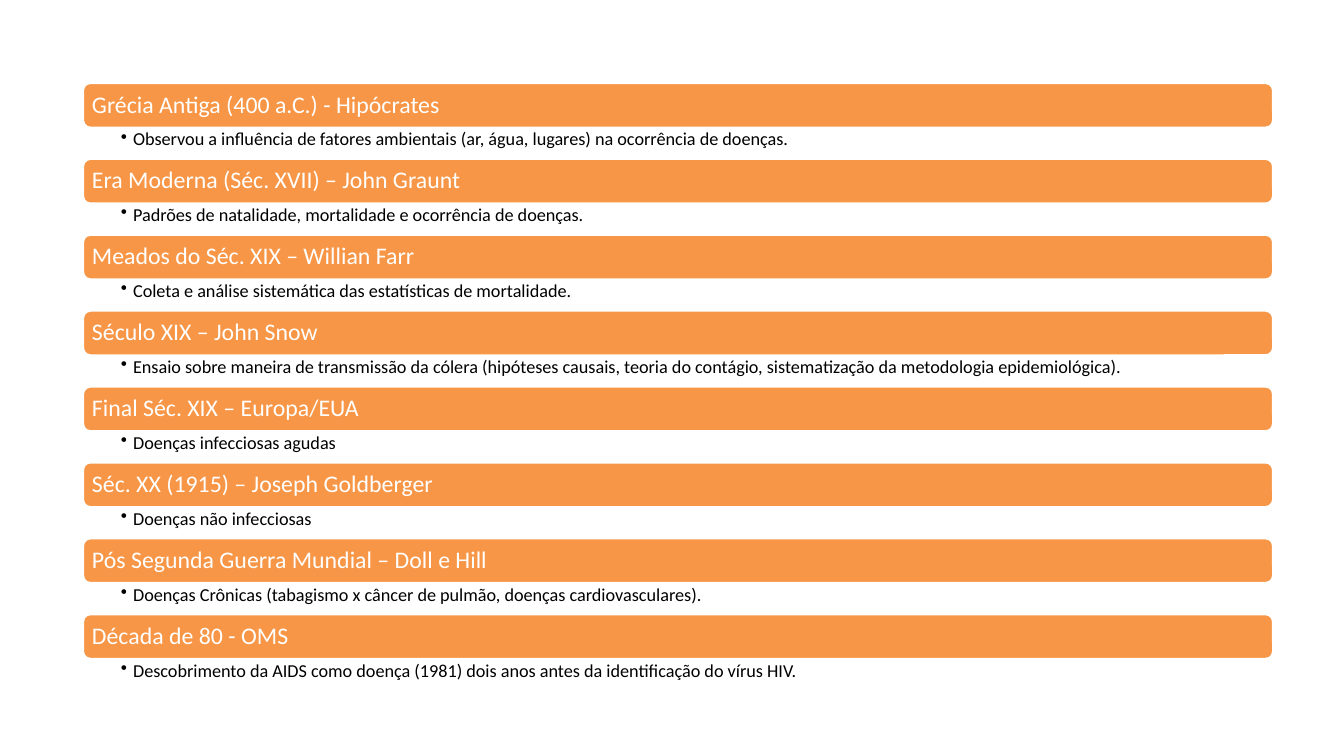
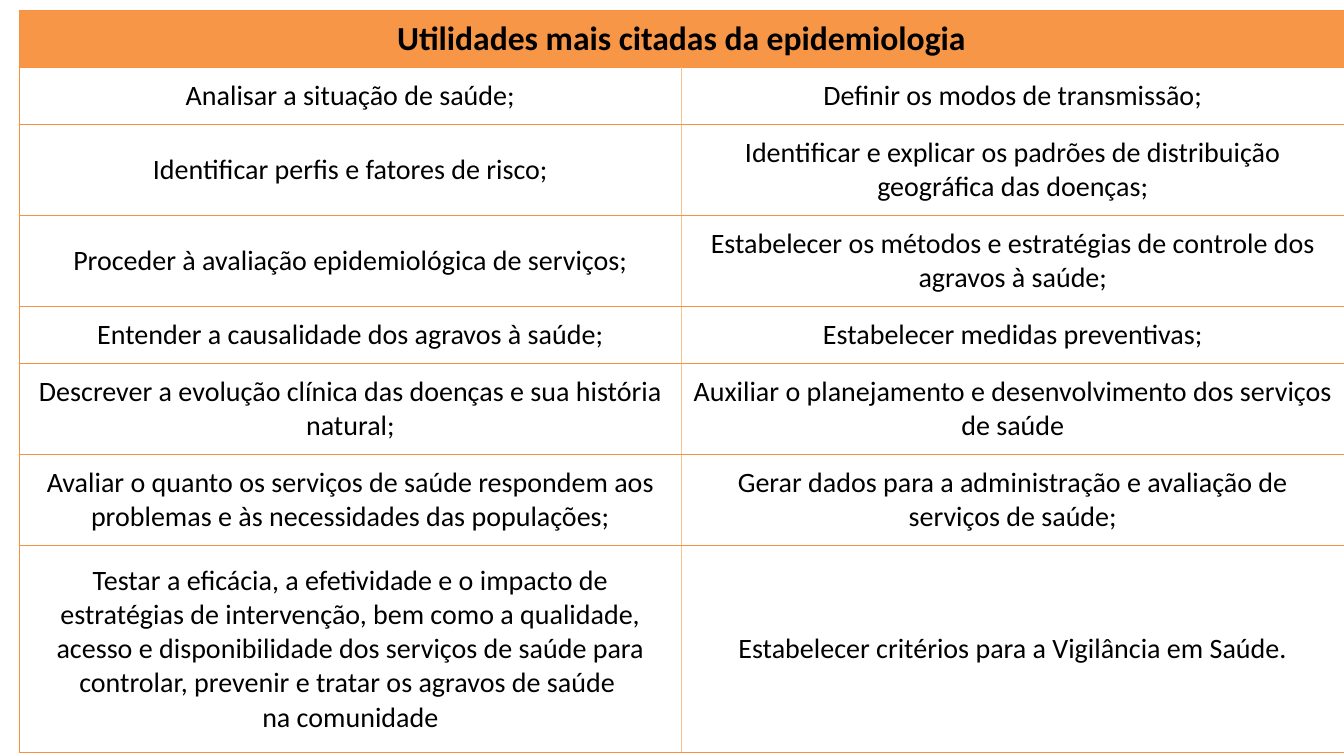
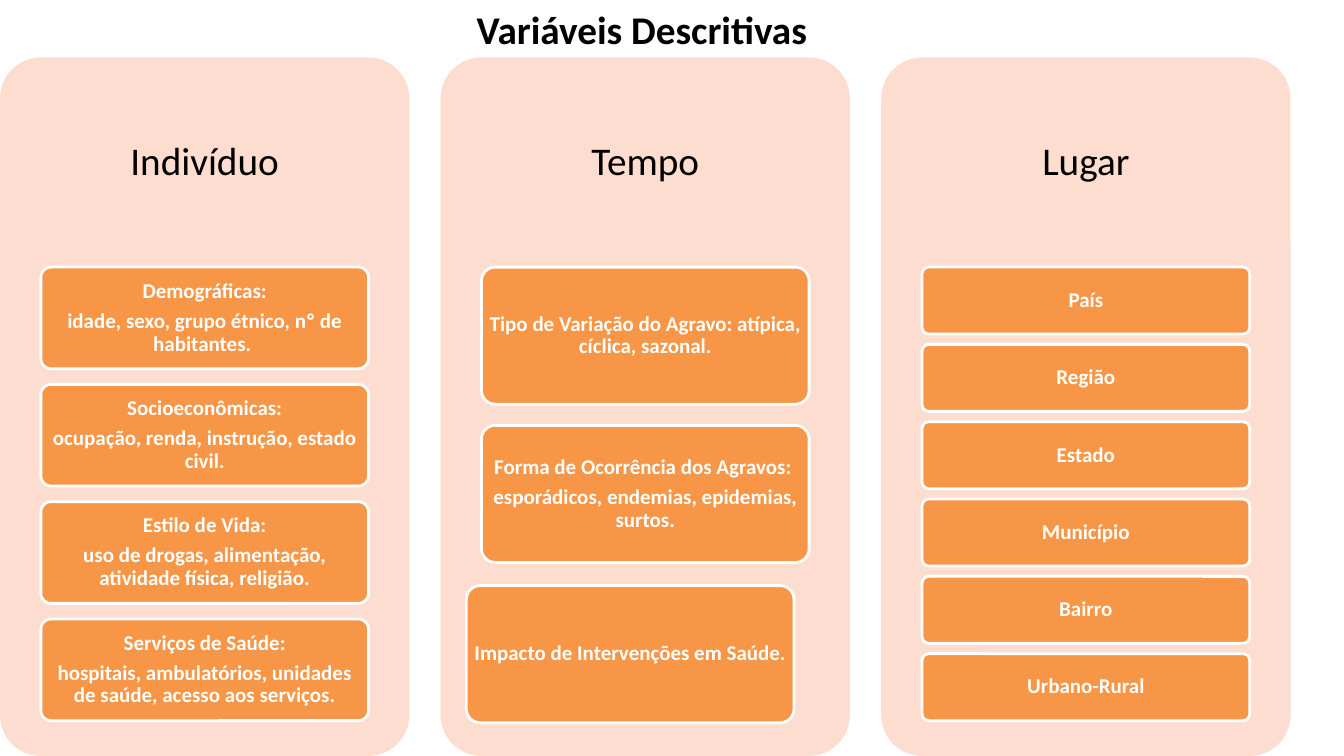
from lxml.etree import SubElement
from pptx import Presentation
from pptx.dml.color import RGBColor
from pptx.enum.shapes import MSO_SHAPE as Preset
from pptx.enum.text import MSO_ANCHOR as Anchor, MSO_AUTO_SIZE as AutoSize, PP_ALIGN as Align
from pptx.oxml.ns import qn
from pptx.util import Inches, Pt

WIDTH, HEIGHT = 13.33, 7.5
FONT = "Calibri"
BLACK, WHITE = "000000", "FFFFFF"
ORANGE, PEACH = "F79646", "FCDDCF"
BORDER, DIVIDER = "F69240", "FAC090"
TITLE_ONLY, BLANK = 5, 6

TIMELINE = [
    ("Grécia Antiga (400 a.C.) - Hipócrates",
     "Observou a influência de fatores ambientais (ar, água, lugares) na ocorrência de doenças."),
    ("Era Moderna (Séc. XVII) – John Graunt",
     "Padrões de natalidade, mortalidade e ocorrência de doenças."),
    ("Meados do Séc. XIX – Willian Farr",
     "Coleta e análise sistemática das estatísticas de mortalidade."),
    ("Século XIX – John Snow",
     "Ensaio sobre maneira de transmissão da cólera (hipóteses causais, teoria do contágio, "
     "sistematização da metodologia epidemiológica)."),
    ("Final Séc. XIX – Europa/EUA", "Doenças infecciosas agudas"),
    ("Séc. XX (1915) – Joseph Goldberger", "Doenças não infecciosas"),
    ("Pós Segunda Guerra Mundial – Doll e Hill",
     "Doenças Crônicas (tabagismo x câncer de pulmão, doenças cardiovasculares)."),
    ("Década de 80 - OMS",
     "Descobrimento da AIDS como doença (1981) dois anos antes da identificação do vírus HIV."),
]

USES_TITLE = "Utilidades mais citadas da epidemiologia"
USES = [
    ("Analisar a situação de saúde;", "Definir os modos de transmissão;"),
    ("Identificar perfis e fatores de risco;",
     "Identificar e explicar os padrões de distribuição geográfica das doenças;"),
    ("Proceder à avaliação epidemiológica de serviços;",
     "Estabelecer os métodos e estratégias de controle dos agravos à saúde;"),
    ("Entender a causalidade dos agravos à saúde;", "Estabelecer medidas preventivas;"),
    ("Descrever a evolução clínica das doenças e sua história natural;",
     "Auxiliar o planejamento e desenvolvimento dos serviços de saúde"),
    ("Avaliar o quanto os serviços de saúde respondem aos problemas e às necessidades das populações;",
     "Gerar dados para a administração e avaliação de serviços de saúde;"),
    ("Testar a eficácia, a efetividade e o impacto de estratégias de intervenção, bem como a "
     "qualidade, acesso e disponibilidade dos serviços de saúde para controlar, prevenir e tratar "
     "os agravos de saúde \nna comunidade",
     "Estabelecer critérios para a Vigilância em Saúde."),
]
USES_HEIGHTS = [0.57, 0.57, 0.9, 0.9, 0.57, 0.9, 0.9, 2.06]

VARIABLES = [
    ("Indivíduo", [
        "Demográficas:\nidade, sexo, grupo étnico, nº de habitantes. ",
        "Socioeconômicas:\nocupação, renda, instrução, estado civil.",
        "Estilo de Vida:\nuso de drogas, alimentação, atividade física, religião.",
        "Serviços de Saúde:\nhospitais, ambulatórios, unidades de saúde, acesso aos serviços.",
    ]),
    ("Tempo", [
        "Tipo de Variação do Agravo: atípica, cíclica, sazonal.",
        "Forma de Ocorrência dos Agravos: \nesporádicos, endemias, epidemias, surtos.",
        "Impacto de Intervenções em Saúde.",
    ]),
    ("Lugar", ["País", "Região", "Estado", "Município", "Bairro", "Urbano-Rural"]),
]
CARD_SHIFTS = {"Impacto de Intervenções em Saúde.": (-0.15, 0.02)}


def color(value):
    """Return the colour for a hex string."""
    return RGBColor.from_string(value)


def box(left, top, width, height):
    """Return a position and size in inches as lengths."""
    return [Inches(value) for value in (left, top, width, height)]


def write_text(frame, text, size=15, fill=BLACK, bold=False, align=Align.CENTER,
               anchor=Anchor.MIDDLE, insets=(0.1, 0.05, 0.1, 0.05), spacing=1.0, gap=0):
    """Fill a text frame with one formatted paragraph per line of text."""
    frame.word_wrap = True
    frame.auto_size = AutoSize.NONE
    frame.vertical_anchor = anchor
    frame.margin_left, frame.margin_top, frame.margin_right, frame.margin_bottom = map(Inches, insets)
    for index, line in enumerate(text.split("\n")):
        paragraph = frame.add_paragraph() if index else frame.paragraphs[0]
        paragraph.alignment = align
        paragraph.line_spacing = spacing
        paragraph.space_before = Pt(gap if index else 0)
        run = paragraph.add_run()
        run.text = line
        run.font.name, run.font.size, run.font.bold = FONT, Pt(size), bold
        run.font.color.rgb = color(fill)


def add_text(slide, position, text, **text_format):
    """Add a text box and return it."""
    shape = slide.shapes.add_textbox(*box(*position))
    write_text(shape.text_frame, text, **text_format)
    return shape


def add_rounded(slide, position, fill, line=None, radius=0.1):
    """Add a rounded rectangle and return it."""
    shape = slide.shapes.add_shape(Preset.ROUNDED_RECTANGLE, *box(*position))
    shape.adjustments[0] = radius
    shape.shadow.inherit = False
    shape.fill.solid()
    shape.fill.fore_color.rgb = color(fill)
    if line:
        shape.line.color.rgb = color(line)
        shape.line.width = Pt(2)
    else:
        shape.line.fill.background()
    return shape


def add_bullet(paragraph, indent):
    """Give a paragraph a round bullet with a hanging indent."""
    properties = paragraph._p.get_or_add_pPr()
    properties.set("marL", str(Inches(indent)))
    properties.set("indent", str(-Inches(indent)))
    SubElement(properties, qn("a:buChar"), char="•")


def set_border(cell, side, fill, width):
    """Draw one side of a table cell."""
    line = SubElement(cell._tc.get_or_add_tcPr(), qn(f"a:ln{side}"), w=str(Pt(width)))
    SubElement(SubElement(line, qn("a:solidFill")), qn("a:srgbClr"), val=fill)


def format_cell(cell, fill, inner_side=None):
    """Set the borders and fill of a table cell."""
    for side in "LRTB":
        if side == inner_side:
            set_border(cell, side, DIVIDER, 1)
        else:
            set_border(cell, side, BORDER, 0.75)
    cell.fill.solid()
    cell.fill.fore_color.rgb = color(fill)


def build_timeline(presentation):
    """Build the slide of headed bands, each with a bullet."""
    slide = presentation.slides.add_slide(presentation.slide_layouts[BLANK])
    left, top, width = 0.82, 0.82, 11.81
    band_height, pitch = 0.45, 5.27 / 7
    for index, (heading, detail) in enumerate(TIMELINE):
        band_top = top + index * pitch
        band = add_rounded(slide, (left, band_top, width, band_height), ORANGE, WHITE, radius=0.17)
        write_text(band.text_frame, heading, size=17, fill=WHITE, align=Align.LEFT,
                   insets=(0.07,) * 4, spacing=0.9)
        note = add_text(slide, (left, band_top + band_height, width, pitch - band_height), detail,
                        size=13, align=Align.LEFT, anchor=Anchor.TOP,
                        insets=(0.38, 0.02, 0.13, 0.02), spacing=0.9)
        add_bullet(note.text_frame.paragraphs[0], 0.12)


def build_uses(presentation):
    """Build the slide with the two-column table."""
    slide = presentation.slides.add_slide(presentation.slide_layouts[BLANK])
    frame = slide.shapes.add_table(len(USES) + 1, 2, *box(0.19, 0.1, 13.14, sum(USES_HEIGHTS)))
    table = frame.table
    table.first_row = table.horz_banding = False
    for row, height in zip(table.rows, USES_HEIGHTS):
        row.height = Inches(height)
    header = table.cell(0, 0)
    header.merge(table.cell(0, 1))
    for column in range(2):
        format_cell(table.cell(0, column), ORANGE)
    write_cell(header, USES_TITLE, size=24, bold=True)
    for row, texts in enumerate(USES, start=1):
        for column, text in enumerate(texts):
            cell = table.cell(row, column)
            format_cell(cell, WHITE, inner_side="RL"[column])
            write_cell(cell, text, size=20)


def write_cell(cell, text, **text_format):
    """Write centred text in a table cell."""
    write_text(cell.text_frame, text, **text_format)
    cell.vertical_anchor = Anchor.MIDDLE


def build_variables(presentation):
    """Build the slide of three panels holding cards."""
    slide = presentation.slides.add_slide(presentation.slide_layouts[TITLE_ONLY])
    title = slide.shapes.title
    title.left, title.top, title.width, title.height = box(2.4, 0, 7.93, 0.57)
    write_text(title.text_frame, "Variáveis Descritivas", size=28, bold=True, anchor=Anchor.TOP)
    panel_top, panel_width, panel_pitch = 0.57, 4.06, 4.37
    cards_top, cards_height, card_width, gap_share = 2.65, 4.5, 3.25, 0.154
    for column, (heading, cards) in enumerate(VARIABLES):
        left = column * panel_pitch
        add_rounded(slide, (left, panel_top, panel_width, HEIGHT - panel_top), PEACH)
        add_text(slide, (left, panel_top, panel_width, cards_top - panel_top), heading,
                 size=28, insets=(0.12,) * 4, spacing=0.9)
        card_left = left + (panel_width - card_width) / 2
        card_height = cards_height / (len(cards) + (len(cards) - 1) * gap_share)
        for row, text in enumerate(cards):
            shift_x, shift_y = CARD_SHIFTS.get(text, (0, 0))
            card_top = cards_top + row * card_height * (1 + gap_share)
            card = add_rounded(slide, (card_left + shift_x, card_top + shift_y,
                                       card_width, card_height), ORANGE, WHITE)
            write_text(card.text_frame, text, fill=WHITE, bold=True,
                       insets=(0.04, 0.03, 0.04, 0.03), spacing=0.9, gap=5.25)


def main():
    """Build and save the presentation."""
    presentation = Presentation()
    presentation.slide_width, presentation.slide_height = Inches(WIDTH), Inches(HEIGHT)
    build_timeline(presentation)
    build_uses(presentation)
    build_variables(presentation)
    presentation.save("out.pptx")


if __name__ == "__main__":
    main()
